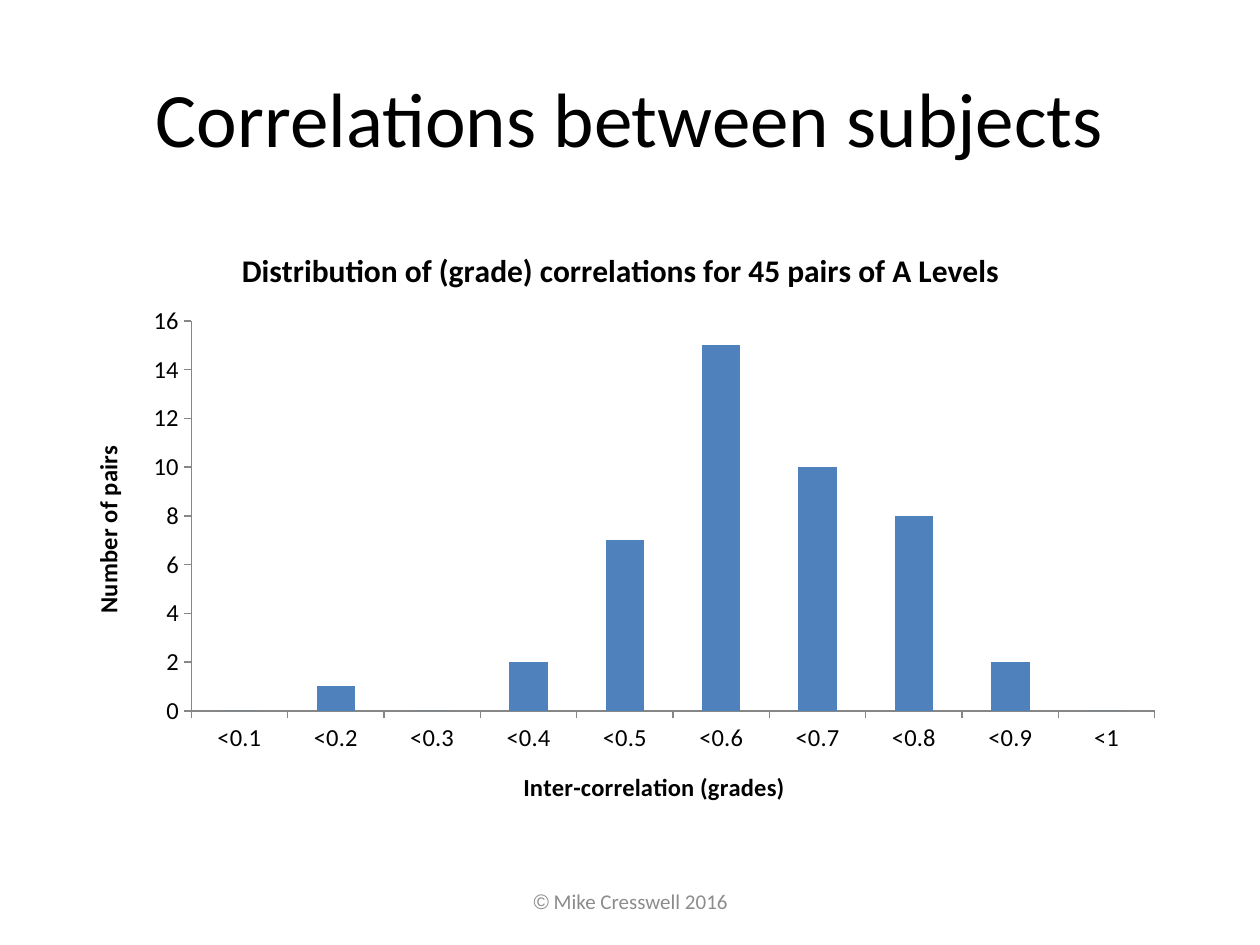
from lxml import etree
from pptx import Presentation
from pptx import util as u
from pptx.chart.data import CategoryChartData
from pptx.dml.color import RGBColor
from pptx.enum import chart as ch, text
from pptx.oxml import ns

COLOURS = {"ink": "000000", "bar": "4F81BD", "axis": "868686", "footer": "8C8C8C"}
FONT = "Calibri"
PAIRS = {"<0.1": 0, "<0.2": 1, "<0.3": 0, "<0.4": 2, "<0.5": 7,
         "<0.6": 15, "<0.7": 10, "<0.8": 8, "<0.9": 2, "<1": 0}
PLOT_AREA = {"x": 0.114, "y": 0.16, "w": 0.866, "h": 0.645}


def colour(name):
    return RGBColor.from_string(COLOURS[name])


def style_font(font, size, name="ink", bold=False, face=FONT):
    font.size = u.Pt(size)
    font.name = face
    font.bold = bold
    font.color.rgb = colour(name)


def add_title(page, wording):
    title = page.shapes.title
    title.left, title.top = u.Cm(1.27), u.Cm(0.76)
    title.width, title.height = u.Cm(22.86), u.Cm(3.18)
    title.text_frame.text = wording
    title.text_frame.vertical_anchor = text.MSO_ANCHOR.MIDDLE
    para = title.text_frame.paragraphs[0]
    para.alignment = text.PP_ALIGN.CENTER
    style_font(para.font, 44)


def set_heading(owner, wording, size):
    frame = (owner.chart_title if hasattr(owner, "chart_title") else owner.axis_title).text_frame
    frame.text = wording
    style_font(frame.paragraphs[0].font, size, bold=True)


def style_axis(axis, wording):
    set_heading(axis, wording, 14)
    axis.has_major_gridlines = False
    axis.major_tick_mark = ch.XL_TICK_MARK.OUTSIDE
    axis.minor_tick_mark = ch.XL_TICK_MARK.NONE
    axis.format.line.color.rgb = colour("axis")
    axis.format.line.width = u.Pt(0.75)
    style_font(axis.tick_labels.font, 14)


def place_plot(chart):
    area = chart.element.find(".//" + ns.qn("c:plotArea"))
    layout = area.find(ns.qn("c:layout"))
    if layout is None:
        layout = etree.Element(ns.qn("c:layout"))
        area.insert(0, layout)
    manual = etree.SubElement(layout, ns.qn("c:manualLayout"))
    settings = {"layoutTarget": "inner", "xMode": "edge", "yMode": "edge", **PLOT_AREA}
    for tag, value in settings.items():
        etree.SubElement(manual, ns.qn("c:" + tag)).set("val", str(value))


def add_column_chart(page):
    data = CategoryChartData()
    data.categories = list(PAIRS)
    data.add_series("Series 1", list(PAIRS.values()))
    chart = page.shapes.add_chart(
        ch.XL_CHART_TYPE.COLUMN_CLUSTERED,
        u.Cm(1.3), u.Cm(4.52), u.Cm(22.43), u.Cm(12.19), data).chart
    style_font(chart.font, 10)
    chart.has_legend = False
    set_heading(chart, "Distribution of (grade) correlations for 45 pairs of A Levels", 18)
    style_axis(chart.category_axis, "Inter-correlation (grades)")
    style_axis(chart.value_axis, "Number of pairs")
    chart.value_axis.minimum_scale = 0
    chart.value_axis.maximum_scale = 16
    chart.value_axis.major_unit = 2
    plot = chart.plots[0]
    plot.gap_width = 150
    plot.vary_by_categories = False
    fill = plot.series[0].format.fill
    fill.solid()
    fill.fore_color.rgb = colour("bar")
    place_plot(chart)


def add_footer(page, spans):
    box = page.shapes.add_textbox(u.Cm(8.69), u.Cm(17.65), u.Cm(8.05), u.Cm(1.02))
    box.text_frame.word_wrap = True
    box.text_frame.vertical_anchor = text.MSO_ANCHOR.MIDDLE
    para = box.text_frame.paragraphs[0]
    para.alignment = text.PP_ALIGN.CENTER
    for wording, face in spans:
        span = para.add_run()
        span.text = wording
        style_font(span.font, 12, "footer", face=face)


def main():
    deck = Presentation()
    deck.slide_width, deck.slide_height = u.Cm(25.4), u.Cm(19.05)
    page = deck.slides.add_slide(deck.slide_layouts.get_by_name("Title Only"))
    add_title(page, "Correlations between subjects")
    add_column_chart(page)
    add_footer(page, [("©", "Arial"), (" Mike Cresswell 2016", FONT)])
    deck.save("out.pptx")


if __name__ == "__main__":
    main()
